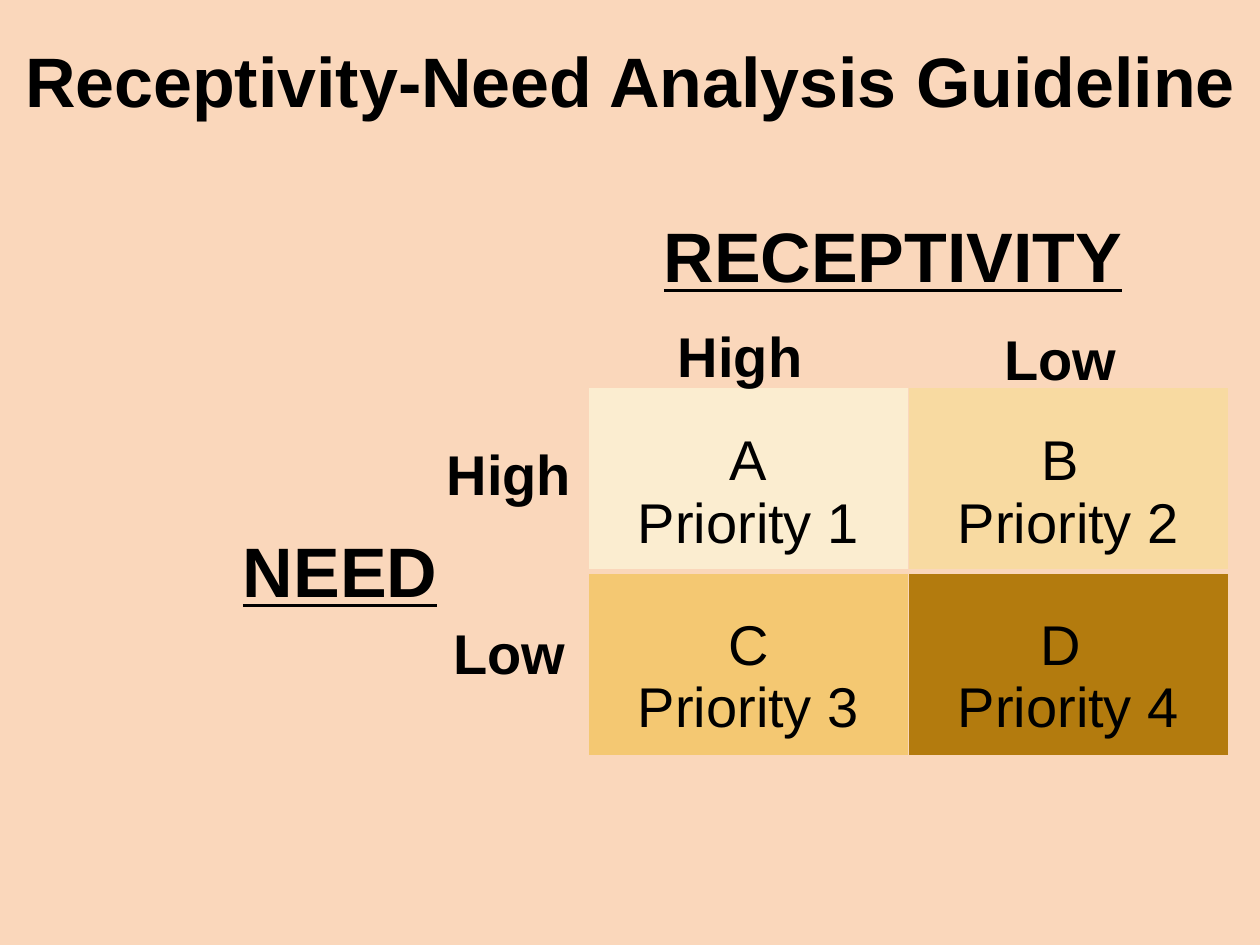
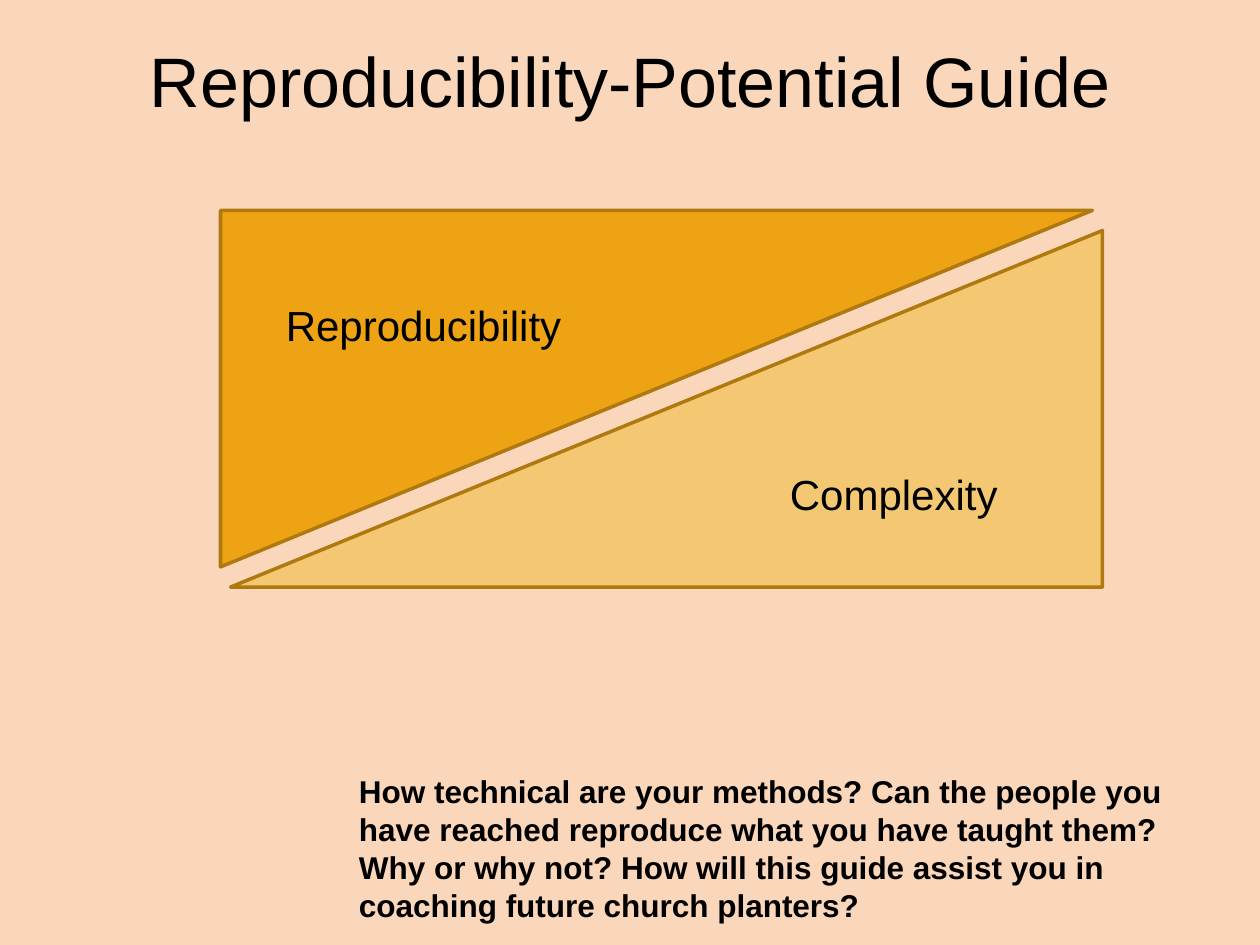
import dataclasses

import pptx
import pptx.dml.color
import pptx.enum.shapes
import pptx.enum.text
import pptx.oxml.ns
import pptx.util
from lxml import etree

Inches = pptx.util.Inches
ALIGN = pptx.enum.text.PP_ALIGN


@dataclasses.dataclass(frozen=True)
class Theme:
    font: str = "Arial"
    ink: str = "000000"
    background: str = "FAD7BB"
    cream: str = "FBEDD0"
    sand: str = "F8DAA1"
    gold: str = "F4C872"
    amber: str = "EDA314"
    brown: str = "B37B0E"
    outline: str = "AF790F"
    title_size: int = 40
    matrix_size: int = 32
    label_size: int = 24
    body_size: int = 18


THEME = Theme()


def rgb(color):
    return pptx.dml.color.RGBColor.from_string(color)


def paint(fill, color):
    fill.solid()
    fill.fore_color.rgb = rgb(color)


def write(para, text, size, bold=False, underline=False, align=ALIGN.LEFT):
    """Add formatted text to a paragraph."""
    para.alignment = align
    span = para.add_run()
    span.text = text
    font = span.font
    font.name, font.size = THEME.font, pptx.util.Pt(size)
    font.bold, font.underline = bold, underline
    font.color.rgb = rgb(THEME.ink)


def add_text(page, text, left, top, width, height, **style):
    """Place a wrapped text box, measured in inches."""
    box = page.shapes.add_textbox(*map(Inches, (left, top, width, height)))
    box.text_frame.word_wrap = True
    write(box.text_frame.paragraphs[0], text, **style)


def add_page(deck, title, bold):
    """Add a blank page with the shared title."""
    page = deck.slides.add_slide(deck.slide_layouts[6])
    add_text(page, title, 0, 0.25, 10, 0.77,
             size=THEME.title_size, bold=bold, align=ALIGN.CENTER)
    return page


def add_border(cell, side, points):
    properties = cell._tc.get_or_add_tcPr()
    name = pptx.oxml.ns.qn
    line = etree.SubElement(properties, name(f"a:ln{side}"), w=str(pptx.util.Pt(points)))
    fill = etree.SubElement(line, name("a:solidFill"))
    etree.SubElement(fill, name("a:srgbClr"), val=THEME.background)


def add_priority_matrix(page, left, top, width, height):
    """Draw the two-by-two table of priorities."""
    rows = [
        [("A", "Priority 1", THEME.cream), ("B ", "Priority 2", THEME.sand)],
        [("C", "Priority 3", THEME.gold), ("D ", "Priority 4", THEME.brown)],
    ]
    table = page.shapes.add_table(2, 2, *map(Inches, (left, top, width, height))).table
    table.first_row = table.horz_banding = False
    for row, entries in enumerate(rows):
        table.rows[row].height = Inches(height / 2)
        for column, (letter, priority, color) in enumerate(entries):
            cell = table.cell(row, column)
            cell.margin_top = Inches(0.34)
            frame = cell.text_frame
            for para, text in ((frame.paragraphs[0], letter),
                               (frame.add_paragraph(), priority)):
                write(para, text, THEME.matrix_size, align=ALIGN.CENTER)
            # The rule between the rows is heavier than the others
            for side in "LRTB":
                between = (row, side) in ((0, "B"), (1, "T"))
                add_border(cell, side, 3 if between else 1)
            paint(cell.fill, color)


def add_matrix_labels(page, left, top):
    """Name both axes and their levels around the matrix corner."""
    axis = dict(size=THEME.title_size, bold=True, underline=True)
    level = dict(size=THEME.matrix_size, bold=True, align=ALIGN.CENTER)
    # Receptivity, above the matrix
    add_text(page, "RECEPTIVITY", left + 0.5, top - 1.43, 4.08, 0.77, **axis)
    add_text(page, "High", left + 0.33, top - 0.57, 1.75, 0.64, **level)
    add_text(page, "Low", left + 3.08, top - 0.54, 1.33, 0.64, **level)
    # Need, to the left of the matrix
    add_text(page, "NEED", left - 2.84, top + 1.07, 2.75, 0.77, **axis)
    for text, drop in (("High", 0.37), ("Low", 1.79)):
        add_text(page, text, left - 1.34, top + drop, 1.42, 0.64, **level)


def add_triangle(page, left, top, width, height, color, flip):
    shape = page.shapes.add_shape(
        pptx.enum.shapes.MSO_SHAPE.RIGHT_TRIANGLE,
        *map(Inches, (left, top, width, height)))
    shape.shadow.inherit = False
    shape.element.spPr.find(pptx.oxml.ns.qn("a:xfrm")).set(flip, "1")
    paint(shape.fill, color)
    shape.line.color.rgb = rgb(THEME.outline)
    shape.line.width = pptx.util.Pt(2)


def add_wedges(page, left, top, width, height):
    """Draw two facing triangles with their labels."""
    add_triangle(page, left + 0.08, top + 0.16, width, height, THEME.gold, "flipH")
    add_triangle(page, left, top, width, height, THEME.amber, "flipV")
    add_text(page, "Reproducibility", left + 0.42, top + 0.66, 3, 0.51,
             size=THEME.label_size)
    add_text(page, "Complexity", left + 4.42, top + 2, 2.42, 0.51,
             size=THEME.label_size)


def build_need_page(deck):
    page = add_page(deck, "Receptivity-Need Analysis Guideline", bold=True)
    left, top = 4.67, 3.07
    add_priority_matrix(page, left, top, 5.08, 2.93)
    add_matrix_labels(page, left, top)


def build_reproducibility_page(deck):
    page = add_page(deck, "Reproducibility-Potential Guide", bold=False)
    add_wedges(page, 1.75, 1.67, 6.92, 2.83)
    # Discussion questions
    add_text(page,
             "How technical are your methods? Can the people you have reached "
             "reproduce what you have taught them? Why or why not? How will this "
             "guide assist you in coaching future church planters?",
             2.75, 6.08, 6.58, 1.31, size=THEME.body_size, bold=True)


def main():
    deck = pptx.Presentation()
    deck.slide_width, deck.slide_height = Inches(10), Inches(7.5)
    paint(deck.slide_master.background.fill, THEME.background)
    build_need_page(deck)
    build_reproducibility_page(deck)
    deck.save("out.pptx")


if __name__ == "__main__":
    main()
